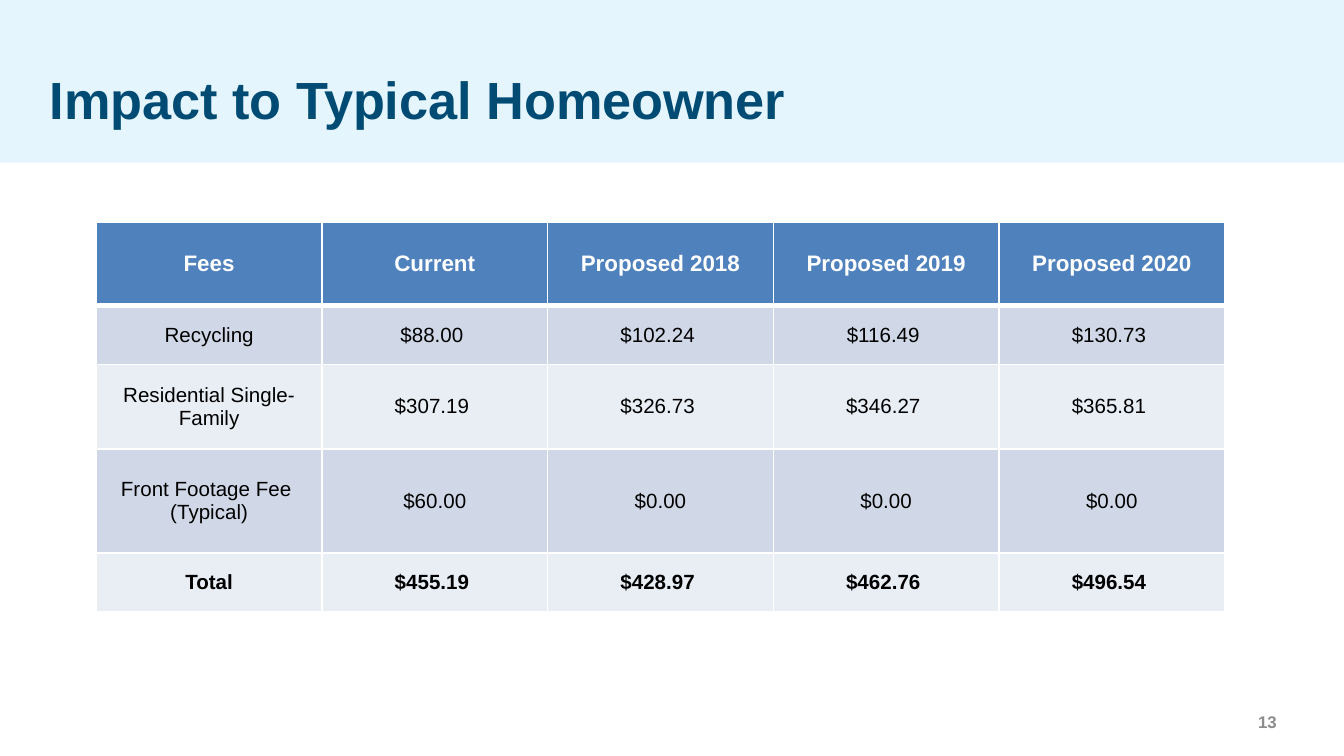
from lxml import etree
from pptx import Presentation
from pptx.dml.color import RGBColor
from pptx.enum.shapes import MSO_SHAPE
from pptx.enum.text import MSO_ANCHOR, PP_ALIGN
from pptx.oxml.ns import qn
from pptx.util import Pt

LEFT, CENTER, RIGHT = PP_ALIGN.LEFT, PP_ALIGN.CENTER, PP_ALIGN.RIGHT
MIDDLE = MSO_ANCHOR.MIDDLE
RECTANGLE = MSO_SHAPE.RECTANGLE

WHITE = RGBColor(0xFF, 0xFF, 0xFF)
BLACK = RGBColor(0x00, 0x00, 0x00)
PALE_BLUE = RGBColor(0xE4, 0xF5, 0xFE)
NAVY = RGBColor(0x00, 0x4B, 0x73)
GRAY = RGBColor(0x8C, 0x8C, 0x8C)
HEADER_BLUE = RGBColor(0x4F, 0x81, 0xBD)
BAND_DARK = RGBColor(0xD0, 0xD8, 0xE8)
BAND_LIGHT = RGBColor(0xE9, 0xED, 0xF4)


def write_text(frame, text, size, color, bold=False, align=LEFT, margins=(0, 0, 0, 0)):
    frame.word_wrap = True
    frame.vertical_anchor = MIDDLE
    frame.margin_left, frame.margin_top, frame.margin_right, frame.margin_bottom = map(Pt, margins)
    frame.text = text
    for para in frame.paragraphs:
        para.alignment = align
        for span in para.runs:
            span.font.name = "Arial"
            span.font.size = Pt(size)
            span.font.bold = bold
            span.font.color.rgb = color


def add_border(cell, side, width):
    properties = cell._tc.get_or_add_tcPr()
    line = etree.SubElement(properties, qn("a:ln" + side), w=str(Pt(width)))
    fill = etree.SubElement(line, qn("a:solidFill"))
    etree.SubElement(fill, qn("a:srgbClr"), val=str(WHITE))


deck = Presentation()
deck.slide_width, deck.slide_height = Pt(720), Pt(405)
page = deck.slides.add_slide(deck.slide_layouts[6])

# Title band
band = page.shapes.add_shape(RECTANGLE, 0, 0, Pt(720), Pt(87.2))
band.shadow.inherit = False
band.fill.solid()
band.fill.fore_color.rgb = PALE_BLUE
band.line.fill.background()

# Page number
number_box = page.shapes.add_textbox(Pt(518.4), Pt(381), Pt(165.6), Pt(10.8))
write_text(number_box.text_frame, "13", 9, GRAY, bold=True, align=RIGHT)

# Title
title_box = page.shapes.add_textbox(0, Pt(36.7), Pt(720), Pt(32.4))
write_text(title_box.text_frame, "Impact to Typical Homeowner", 28, NAVY, bold=True,
           margins=(26.6, 0, 0, 0))

# Fee table
rows = [
    ["Fees", "Current", "Proposed 2018", "Proposed 2019", "Proposed 2020"],
    ["Recycling", "$88.00 ", "$102.24 ", "$116.49 ", "$130.73 "],
    ["Residential Single-Family", "$307.19 ", "$326.73 ", "$346.27 ", "$365.81 "],
    ["Front Footage Fee \n(Typical)", "$60.00", "$0.00", "$0.00", "$0.00"],
    ["Total", "$455.19 ", "$428.97 ", "$462.76 ", "$496.54 "],
]
row_heights = [44.6, 31.4, 45.4, 55.6, 31.6]
column_width = 120.9
last_row = len(rows) - 1

table = page.shapes.add_table(len(rows), len(rows[0]), Pt(51.6), Pt(119.2),
                              Pt(column_width * len(rows[0])), Pt(sum(row_heights))).table
for column in table.columns:
    column.width = Pt(column_width)

for row_index, (values, height) in enumerate(zip(rows, row_heights)):
    table.rows[row_index].height = Pt(height)
    is_header = row_index == 0
    if is_header:
        fill_color = HEADER_BLUE
    else:
        fill_color = BAND_DARK if row_index % 2 else BAND_LIGHT
    for column_index, value in enumerate(values):
        cell = table.cell(row_index, column_index)
        # The line under the header is thicker than the rest
        add_border(cell, "L", 1)
        add_border(cell, "R", 1)
        add_border(cell, "T", 3 if row_index == 1 else 1)
        add_border(cell, "B", 3 if is_header else 1)
        cell.fill.solid()
        cell.fill.fore_color.rgb = fill_color
        cell.vertical_anchor = MIDDLE
        cell.margin_left = cell.margin_right = Pt(10.8)
        cell.margin_top = cell.margin_bottom = Pt(7.9)
        write_text(cell.text_frame, value, 12 if is_header else 11,
                   WHITE if is_header else BLACK,
                   bold=row_index in (0, last_row), align=CENTER,
                   margins=(0, 0, 0, 0))

deck.save("out.pptx")
